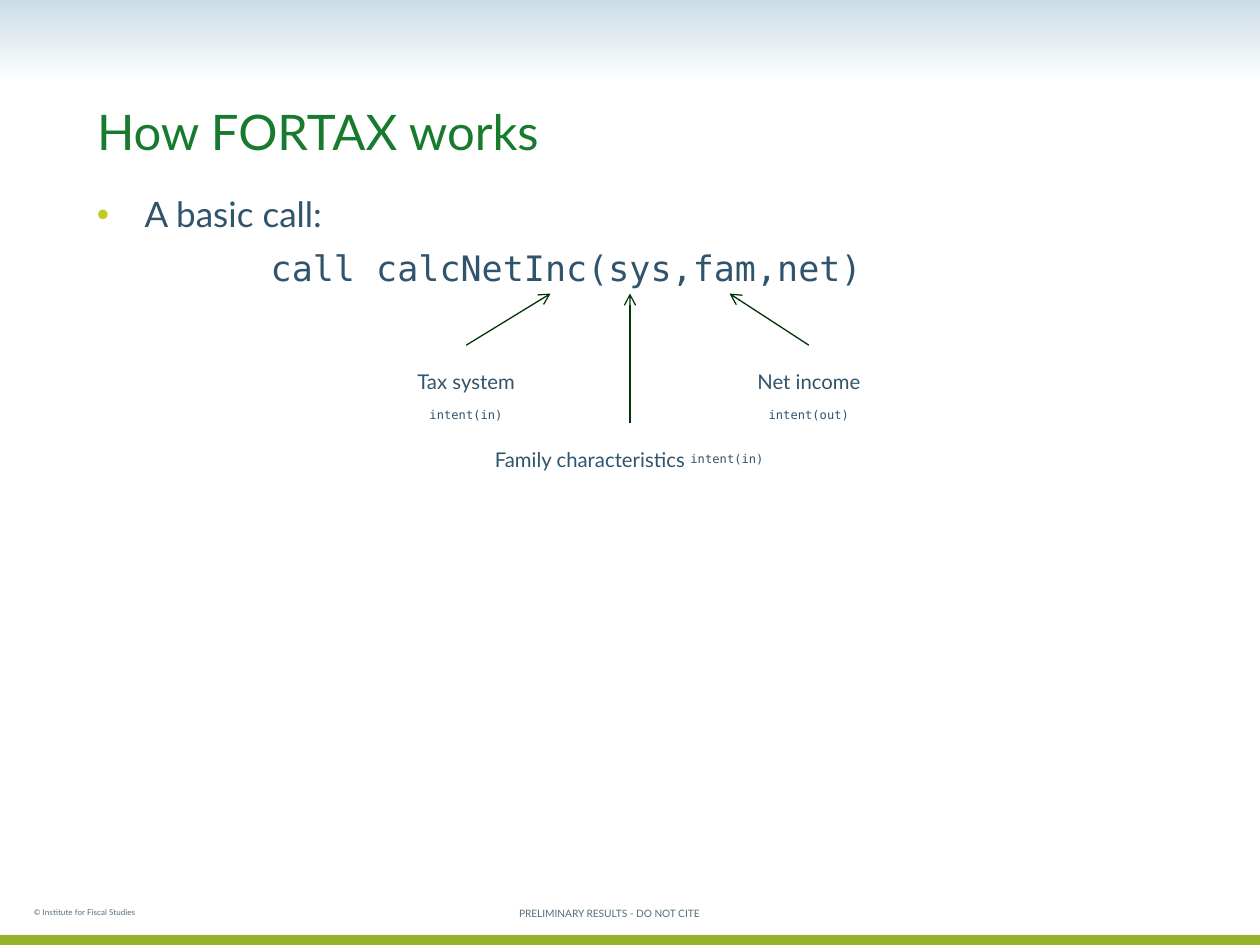
from dataclasses import dataclass

from pptx import Presentation
from pptx.dml.color import RGBColor
from pptx.enum.shapes import MSO_CONNECTOR, MSO_SHAPE
from pptx.enum.text import MSO_ANCHOR, MSO_AUTO_SIZE, PP_ALIGN
from pptx.oxml.ns import qn
from pptx.util import Inches, Pt
from lxml.etree import SubElement

COLORS = {"sky": "CCDDE6", "white": "FFFFFF", "lime": "97B32C", "bullet": "BFCC22",
          "title": "187A2E", "text": "31546D", "footer": "526D7F", "arrow": "003306"}
SANS, MONO = "Lato", "DejaVu Sans Mono"


@dataclass
class Argument:
    label: str
    intent: str
    box: tuple[float, float, float, float]
    start: tuple[float, float]
    end: tuple[float, float]


ARGUMENTS = [
    Argument("Tax system ", "intent(in)", (3.03, 2.74, 1.34, 0.54), (3.7, 2.74), (4.37, 2.33)),
    Argument("Family characteristics ", "intent(in)", (3.58, 3.36, 2.83, 0.54), (5, 3.36), (5, 2.33)),
    Argument("Net income ", "intent(out)", (5.71, 2.74, 1.42, 0.54), (6.42, 2.74), (5.79, 2.33)),
]


def rgb(name: str) -> RGBColor:
    return RGBColor.from_string(COLORS[name])


def add_run(p, text: str, *, size: float = 20, font: str = SANS,
            color: str = "text", lowered: bool = False) -> None:
    r = p.add_run()
    r.text = text
    r.font.size, r.font.name = Pt(size), font
    r.font.color.rgb = rgb(color)
    if lowered:
        r.font._element.set("baseline", "-25000")


def add_box(s, box: tuple, *, inset: bool = True, grow: bool = False,
            anchor=MSO_ANCHOR.TOP, align=PP_ALIGN.LEFT):
    tf = s.shapes.add_textbox(*map(Inches, box)).text_frame
    tf.word_wrap = True
    tf.vertical_anchor = anchor
    if grow:
        tf.auto_size = MSO_AUTO_SIZE.SHAPE_TO_FIT_TEXT
    if not inset:
        tf.margin_left = tf.margin_right = tf.margin_top = tf.margin_bottom = 0
    tf.paragraphs[0].alignment = align
    return tf


def add_band(s, top: float, height: float):
    sp = s.shapes.add_shape(MSO_SHAPE.RECTANGLE, 0, Inches(top), Inches(10), Inches(height))
    sp.shadow.inherit = False
    sp.line.fill.background()
    return sp


def set_indent(p, left: float, first: float, bullet: str = "") -> None:
    pPr = p._p.get_or_add_pPr()
    pPr.set("marL", str(Inches(left)))
    pPr.set("indent", str(Inches(first)))
    if bullet:
        clr = SubElement(pPr, qn("a:buClr"))
        SubElement(clr, qn("a:srgbClr")).set("val", COLORS["bullet"])
        SubElement(pPr, qn("a:buFont")).set("typeface", "Arial")
        SubElement(pPr, qn("a:buChar")).set("char", bullet)
    p.line_spacing = 0.95


def add_arrow(s, start: tuple, end: tuple) -> None:
    c = s.shapes.add_connector(MSO_CONNECTOR.STRAIGHT, *map(Inches, start + end))
    c.line.color.rgb = rgb("arrow")
    c.line.width = Pt(0.75)
    SubElement(c.line._get_or_add_ln(), qn("a:tailEnd")).set("type", "arrow")
    SubElement(c._element.spPr, qn("a:effectLst"))


def main() -> None:
    prs = Presentation()
    prs.slide_width, prs.slide_height = Inches(10), Inches(7.5)
    s = prs.slides.add_slide(prs.slide_layouts[5])

    # Top and bottom bands
    fill = add_band(s, 0, 0.67).fill
    fill.gradient()
    fill.gradient_angle = 270
    for stop, name in zip(fill.gradient_stops, ("sky", "white")):
        stop.color.rgb = rgb(name)
    fill = add_band(s, 7.42, 0.08).fill
    fill.solid()
    fill.fore_color.rgb = rgb("lime")

    # Title
    title = s.shapes.title
    title.left, title.top, title.width, title.height = map(Inches, (0.67, 0.25, 8.58, 1.08))
    title.text_frame.vertical_anchor = MSO_ANCHOR.BOTTOM
    p = title.text_frame.paragraphs[0]
    p.alignment, p.line_spacing = PP_ALIGN.LEFT, 0.9
    add_run(p, "How FORTAX works", size=28, color="title")

    # The call
    tf = add_box(s, (0.67, 1.5, 8.98, 1.78))
    p = tf.paragraphs[0]
    set_indent(p, 0.38, -0.38, bullet="•")
    p.space_after = Pt(4)
    add_run(p, "A basic call:")
    p = tf.add_paragraph()
    set_indent(p, 1.38, 0)
    p.space_before = Pt(4)
    add_run(p, "call calcNetInc(sys,fam,net)", font=MONO)

    # Arguments with their arrows
    for arg in ARGUMENTS:
        p = add_box(s, arg.box, inset=False, grow=True, align=PP_ALIGN.CENTER).paragraphs[0]
        add_run(p, arg.label, lowered=True)
        add_run(p, arg.intent, size=12, font=MONO, lowered=True)
        add_arrow(s, arg.start, arg.end)

    # Footer
    tf = add_box(s, (0.17, 7.08, 2.75, 0.25))
    add_run(tf.paragraphs[0], "© Institute for Fiscal Studies", size=8, color="footer", lowered=True)
    tf = add_box(s, (3.25, 7.08, 3.17, 0.25), anchor=MSO_ANCHOR.MIDDLE, align=PP_ALIGN.CENTER)
    add_run(tf.paragraphs[0], "PRELIMINARY RESULTS - DO NOT CITE", size=10, color="footer", lowered=True)

    prs.save("out.pptx")


if __name__ == "__main__":
    main()
